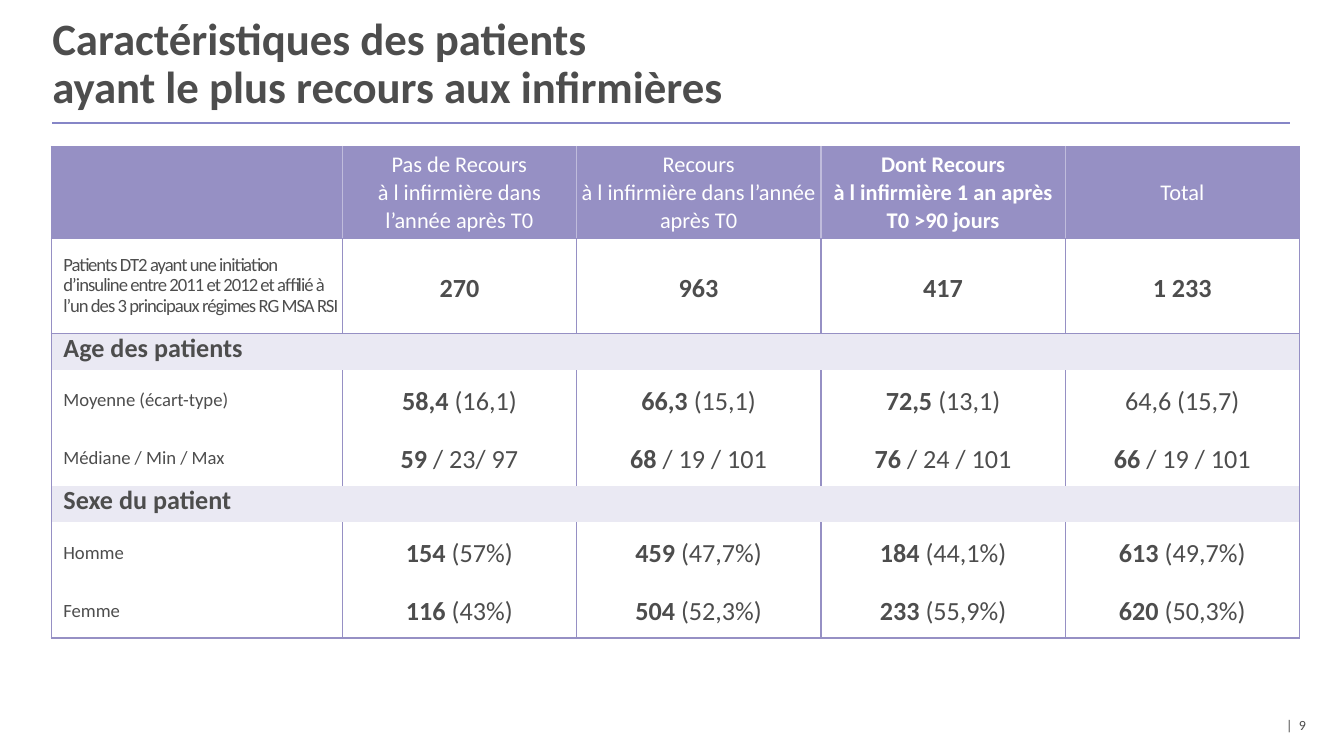
"""Build the slide on the characteristics of patients relying most on nurses."""
from typing import NamedTuple, Optional

from lxml import etree
from pptx import Presentation
from pptx import util as u
from pptx.dml.color import RGBColor
from pptx.enum import shapes, text
from pptx.oxml import ns

FONT = "Calibri"
GREY = RGBColor(0x4D, 0x4D, 0x4D)
WHITE = RGBColor(0xFF, 0xFF, 0xFF)
PURPLE = RGBColor(0x96, 0x90, 0xC4)
PALE_PURPLE = RGBColor(0xC0, 0xBC, 0xDC)
LAVENDER = RGBColor(0xEA, 0xE9, 0xF3)
RULE_BLUE = RGBColor(0x86, 0x86, 0xC7)

COLUMN_WIDTHS = (156, 125.3, 131, 131, 125.3)
HEADER_HEIGHT, COHORT_HEIGHT, SECTION_HEIGHT, DATA_HEIGHT = 49, 51, 19.5, 31


class Value(NamedTuple):
    strong: str
    plain: str = ""


class Style(NamedTuple):
    size: float
    color: RGBColor = GREY
    align: text.PP_ALIGN = text.PP_ALIGN.LEFT
    leading: object = 1.15
    around: float = 0
    tracking: int = 0


class Insets(NamedTuple):
    left: float
    vertical: float
    right: float = 2.2


class Row(NamedTuple):
    label: Value
    label_style: Style
    height: float
    inset: float
    values: tuple = ()
    edges: str = "LR"


HEADER = Style(12, WHITE, text.PP_ALIGN.CENTER, u.Pt(15))
FIGURE = Style(14, align=text.PP_ALIGN.CENTER, around=3)
COHORT = Style(10, leading=u.Pt(11), around=3, tracking=-50)
SECTION = Style(14, leading=u.Pt(13), around=3)
AGE_LABEL = Style(10, leading=u.Pt(13), around=3)
SEX_LABEL = Style(10, around=3)

HEADINGS = (
    Value(""),
    Value("", "Pas de Recours\nà l infirmière dans l’année après T0"),
    Value("", "Recours\nà l infirmière dans l’année après T0"),
    Value("Dont Recours\nà l infirmière 1 an après T0 >90 jours"),
    Value("", "Total"),
)

ROWS = (
    Row(Value("", "Patients DT2 ayant une initiation d’insuline entre 2011 et 2012 et affilié à "
              "l’un des 3 principaux régimes RG MSA RSI"), COHORT, COHORT_HEIGHT, 2.9,
        (Value("270"), Value("963"), Value("417"), Value("1 233")), "LRTB"),
    Row(Value("Age des patients"), SECTION, SECTION_HEIGHT, 2.9, edges="LRT"),
    Row(Value("", "Moyenne (écart-type)"), AGE_LABEL, DATA_HEIGHT, 5.8,
        (Value("58,4 ", "(16,1)"), Value("66,3 ", "(15,1)"),
         Value("72,5 ", "(13,1)"), Value("", "64,6 (15,7)"))),
    Row(Value("", "Médiane / Min / Max"), AGE_LABEL, DATA_HEIGHT, 5.8,
        (Value("59 ", "/ 23/ 97"), Value("68 ", "/ 19 / 101"),
         Value("76 ", "/ 24 / 101"), Value("66 ", "/ 19 / 101"))),
    Row(Value("Sexe du patient"), SECTION, SECTION_HEIGHT, 2.9),
    Row(Value("", "Homme"), SEX_LABEL, DATA_HEIGHT, 5.8,
        (Value("154 ", "(57%)"), Value("459 ", "(47,7%)"),
         Value("184 ", "(44,1%)"), Value("613 ", "(49,7%)"))),
    Row(Value("", "Femme"), SEX_LABEL, DATA_HEIGHT, 5.8,
        (Value("116 ", "(43%)"), Value("504 ", "(52,3%)"),
         Value("233 ", "(55,9%)"), Value("620 ", "(50,3%)")), "LRB"),
)


def write(frame, value: Value, style: Style) -> None:
    """Write a bold part and a regular part in one paragraph."""
    paragraph = frame.paragraphs[0]
    paragraph.alignment = style.align
    paragraph.line_spacing = style.leading
    paragraph.space_before = paragraph.space_after = u.Pt(style.around)
    paragraph.text = value.strong or value.plain
    for run in paragraph.runs:
        run.font.bold = bool(value.strong)
    if value.strong and value.plain:
        tail = paragraph.add_run()
        tail.text = value.plain
        tail.font.bold = False
    for run in paragraph.runs:
        run.font.name = FONT
        run.font.size = u.Pt(style.size)
        run.font.color.rgb = style.color
        if style.tracking:
            run.font._element.set("spc", str(style.tracking))


def set_borders(cell, colors: dict[str, RGBColor]) -> None:
    """Draw the named cell edges and clear the others."""
    properties = cell._tc.get_or_add_tcPr()
    for edge in "LRTB":
        line = etree.SubElement(properties, ns.qn(f"a:ln{edge}"), w=str(u.Pt(0.75)))
        if edge in colors:
            solid = etree.SubElement(line, ns.qn("a:solidFill"))
            etree.SubElement(solid, ns.qn("a:srgbClr"), val=str(colors[edge]))
        else:
            etree.SubElement(line, ns.qn("a:noFill"))


def fill_cell(cell, fill: RGBColor, borders: dict[str, RGBColor], insets: Insets,
              value: Optional[Value] = None, style: Style = FIGURE) -> None:
    """Give a cell its borders, fill, margins and text."""
    set_borders(cell, borders)
    cell.fill.solid()
    cell.fill.fore_color.rgb = fill
    cell.vertical_anchor = text.MSO_ANCHOR.MIDDLE
    cell.margin_left, cell.margin_right = u.Pt(insets.left), u.Pt(insets.right)
    cell.margin_top = cell.margin_bottom = u.Pt(insets.vertical)
    if value:
        write(cell.text_frame, value, style)


def add_patient_table(slide) -> None:
    """Add the table comparing the patient groups."""
    heights = (HEADER_HEIGHT, *(row.height for row in ROWS))
    last = len(COLUMN_WIDTHS) - 1
    table = slide.shapes.add_table(
        len(heights), len(COLUMN_WIDTHS), u.Pt(27.5), u.Pt(78.5),
        u.Pt(sum(COLUMN_WIDTHS)), u.Pt(sum(heights))).table
    table.horz_banding = False
    for column, width in zip(table.columns, COLUMN_WIDTHS):
        column.width = u.Pt(width)
    for table_row, height in zip(table.rows, heights):
        table_row.height = u.Pt(height)

    for index, heading in enumerate(HEADINGS):
        borders = {"L": PALE_PURPLE if index else PURPLE, "T": PURPLE,
                   "R": PALE_PURPLE if index < last else PURPLE, "B": PURPLE}
        fill_cell(table.cell(0, index), PURPLE, borders, Insets(2.2, 2.2), heading, HEADER)

    for number, row in enumerate(ROWS, 1):
        borders = {edge: PURPLE for edge in row.edges}
        label = table.cell(number, 0)
        fill_cell(label, WHITE if row.values else LAVENDER, borders,
                  Insets(6.5, row.inset), row.label, row.label_style)
        if row.values:
            inset = 0 if row.label_style is COHORT else row.inset
            for index, value in enumerate(row.values, 1):
                fill_cell(table.cell(number, index), WHITE, borders, Insets(2.2, inset), value)
        else:
            for index in range(1, last + 1):
                edges = {edge: PURPLE for edge in row.edges
                         if edge == "T" or (edge == "R" and index == last)}
                fill_cell(table.cell(number, index), LAVENDER, edges, Insets(2.2, 0))
            label.merge(table.cell(number, last))


def add_text(slide, left: float, top: float, width: float, height: float,
             value: Value, style: Style, anchor: text.MSO_ANCHOR) -> None:
    """Add a text box without margins."""
    frame = slide.shapes.add_textbox(*map(u.Pt, (left, top, width, height))).text_frame
    frame.word_wrap = True
    frame.vertical_anchor = anchor
    frame.margin_left = frame.margin_right = frame.margin_top = frame.margin_bottom = 0
    write(frame, value, style)


def add_title_rule(slide) -> None:
    """Draw the line under the title."""
    rule = slide.shapes.add_connector(
        shapes.MSO_CONNECTOR.STRAIGHT, u.Pt(28), u.Pt(65.75), u.Pt(691), u.Pt(65.75))
    rule.line.color.rgb = RULE_BLUE
    rule.line.width = u.Pt(1)
    etree.SubElement(rule._element.spPr, ns.qn("a:effectLst"))


def main() -> None:
    """Build and save the presentation."""
    deck = Presentation()
    deck.slide_width, deck.slide_height = u.Pt(720), u.Pt(405)
    slide = deck.slides.add_slide(deck.slide_layouts[6])
    add_title_rule(slide)
    add_text(slide, 28, 9.5, 674, 50,
             Value("Caractéristiques des patients\nayant le plus recours aux infirmières"),
             Style(24, leading=u.Pt(26)), text.MSO_ANCHOR.MIDDLE)
    add_text(slide, 689, 384, 31, 13.5, Value("", "|  9"),
             Style(7.5, leading=1.0), text.MSO_ANCHOR.TOP)
    add_patient_table(slide)
    deck.save("out.pptx")


if __name__ == "__main__":
    main()
